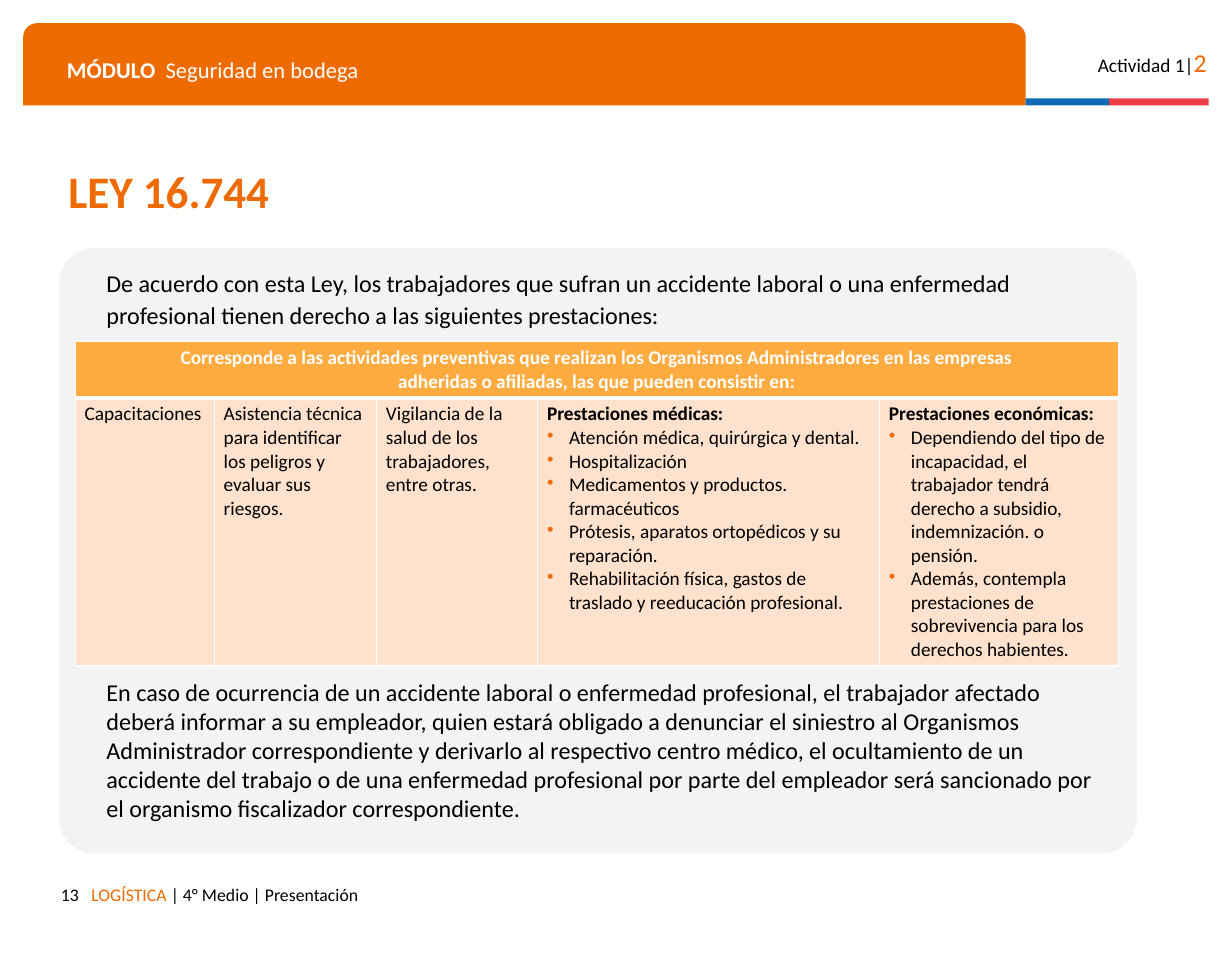
from lxml import etree
from pptx import Presentation
from pptx import util as u
from pptx.dml import color as dml_color
from pptx.enum import shapes, text
from pptx.oxml import ns

SCALE = 9144
FONT = "Calibri"
ORANGE, BLUE, RED = "ED6B00", "0F69B4", "EB3C46"
BLACK, WHITE, GRAY = "000000", "FFFFFF", "F3F3F3"
AMBER, PEACH = "FFAB40", "FFE2CD"
SHAPE = shapes.MSO_SHAPE
ALIGN = text.PP_ALIGN
ANCHOR = text.MSO_ANCHOR

HEADER = [
    "Corresponde a las actividades preventivas que realizan los Organismos Administradores en las empresas",
    "adheridas o afiliadas, las que pueden consistir en:",
]
COLUMNS = [
    (120, "Capacitaciones", []),
    (140, "Asistencia técnica para identificar los peligros y evaluar sus riesgos.", []),
    (139, "Vigilancia de la salud de los trabajadores, entre otras.", []),
    (295, "Prestaciones médicas:", [
        "Atención médica, quirúrgica y dental.",
        "Hospitalización",
        "Medicamentos y productos. farmacéuticos",
        "Prótesis, aparatos ortopédicos y su reparación.",
        "Rehabilitación física, gastos de traslado y reeducación profesional.",
    ]),
    (206, "Prestaciones económicas:", [
        "Dependiendo del tipo de incapacidad, el trabajador tendrá derecho a subsidio, indemnización. o pensión.",
        "Además, contempla prestaciones de sobrevivencia para los derechos habientes.",
    ]),
]
ROW_HEIGHTS = [48, 227]
INTRO = (
    "De acuerdo con esta Ley, los trabajadores que sufran un accidente laboral o una enfermedad "
    "profesional tienen derecho a las siguientes prestaciones:"
)
CLOSING = (
    "En caso de ocurrencia de un accidente laboral o enfermedad profesional, el trabajador afectado "
    "deberá informar a su empleador, quien estará obligado a denunciar el siniestro al Organismos "
    "Administrador correspondiente y derivarlo al respectivo centro médico, el ocultamiento de un "
    "accidente del trabajo o de una enfermedad profesional por parte del empleador será sancionado "
    "por el organismo fiscalizador correspondiente."
)


def px(value):
    return u.Emu(value * SCALE)


def rgb(value):
    return dml_color.RGBColor.from_string(value)


def add_text(paragraph, content, size=12, color=BLACK, bold=False, align=ALIGN.LEFT, spacing=None):
    paragraph.alignment = align
    if spacing:
        paragraph.line_spacing = spacing
    run = paragraph.add_run()
    run.text = content
    run.font.name = FONT
    run.font.size = u.Pt(size)
    run.font.bold = bold
    run.font.color.rgb = rgb(color)


def prepare_frame(frame, anchor=ANCHOR.TOP, inset=10):
    frame.word_wrap = True
    frame.auto_size = text.MSO_AUTO_SIZE.NONE
    frame.vertical_anchor = anchor
    frame.margin_left = frame.margin_right = px(10)
    frame.margin_top = frame.margin_bottom = px(inset)
    return frame.paragraphs[0]


def add_label(slide, box, content, anchor=ANCHOR.TOP, inset=10, **style):
    textbox = slide.shapes.add_textbox(*map(px, box))
    paragraph = prepare_frame(textbox.text_frame, anchor, inset)
    add_text(paragraph, content, **style)
    return paragraph


def add_block(slide, kind, box, color, *adjustments):
    shape = slide.shapes.add_shape(kind, *map(px, box))
    shape.shadow.inherit = False
    shape.fill.solid()
    shape.fill.fore_color.rgb = rgb(color)
    shape.line.fill.background()
    for index, value in enumerate(adjustments):
        shape.adjustments[index] = value


def set_title(slide, box, content, **style):
    title = slide.shapes.title
    title.left, title.top, title.width, title.height = map(px, box)
    add_text(prepare_frame(title.text_frame, ANCHOR.MIDDLE), content, **style)


def add_bullet(paragraph):
    properties = paragraph._p.get_or_add_pPr()
    properties.set("marL", str(px(19)))
    properties.set("indent", str(px(-19)))
    bullet_color = etree.SubElement(properties, ns.qn("a:buClr"))
    etree.SubElement(bullet_color, ns.qn("a:srgbClr"), val=ORANGE)
    etree.SubElement(properties, ns.qn("a:buChar"), char="•")


def format_cell(cell, fill, **widths):
    cell.margin_left = cell.margin_right = px(8)
    cell.margin_top = cell.margin_bottom = px(4)
    cell.vertical_anchor = ANCHOR.TOP
    cell.fill.solid()
    cell.fill.fore_color.rgb = rgb(fill)
    properties = cell._tc.get_or_add_tcPr()
    for index, side in enumerate("LRTB"):
        border = etree.Element(ns.qn(f"a:ln{side}"), w=str(u.Pt(widths.get(side, 1))))
        line_fill = etree.SubElement(border, ns.qn("a:solidFill"))
        etree.SubElement(line_fill, ns.qn("a:srgbClr"), val=WHITE)
        properties.insert(index, border)


def add_benefits_table(slide, left, top):
    width = sum(column[0] for column in COLUMNS)
    frame = slide.shapes.add_table(
        2, len(COLUMNS), px(left), px(top), px(width), px(sum(ROW_HEIGHTS))
    )
    table = frame.table
    for row, height in zip(table.rows, ROW_HEIGHTS):
        row.height = px(height)
    for index, (column_width, heading, items) in enumerate(COLUMNS):
        table.columns[index].width = px(column_width)
        format_cell(table.cell(0, index), AMBER, B=3)
        cell = table.cell(1, index)
        format_cell(cell, PEACH, T=3)
        add_text(cell.text_frame.paragraphs[0], heading, bold=bool(items))
        for item in items:
            paragraph = cell.text_frame.add_paragraph()
            add_text(paragraph, item)
            add_bullet(paragraph)
    header = table.cell(0, 0)
    header.merge(table.cell(0, len(COLUMNS) - 1))
    frame = header.text_frame
    for paragraph, line in zip([frame.paragraphs[0], frame.add_paragraph()], HEADER):
        add_text(paragraph, line, color=WHITE, bold=True, align=ALIGN.CENTER)


def add_banner(slide):
    add_block(slide, SHAPE.ROUND_2_SAME_RECTANGLE, (20, 20, 865, 71), ORANGE, 0.167, 0)
    add_block(slide, SHAPE.RECTANGLE, (885, 85, 72, 6), BLUE)
    add_block(slide, SHAPE.RECTANGLE, (957, 85, 86, 6), RED)
    add_label(slide, (48, 38, 100, 35), "MÓDULO", size=14, color=WHITE, bold=True)
    add_label(slide, (133, 38, 729, 35), "Seguridad en bodega", size=14, color=WHITE)
    activity = add_label(slide, (923, 30, 128, 38), "Actividad 1|", align=ALIGN.RIGHT)
    add_text(activity, "2", size=16, color=ORANGE, align=ALIGN.RIGHT)


def add_footer(slide):
    add_label(slide, (20, 753, 58, 29), "13", size=11, align=ALIGN.RIGHT)
    footer = add_label(slide, (69, 753, 714, 38), "LOGÍSTICA ", size=11, color=ORANGE)
    add_text(footer, "| 4° Medio | Presentación", size=11)


def main():
    presentation = Presentation()
    presentation.slide_width = px(1063)
    presentation.slide_height = px(827)
    slide = presentation.slides.add_slide(presentation.slide_layouts[5])
    add_banner(slide)
    add_footer(slide)
    add_block(slide, SHAPE.ROUNDED_RECTANGLE, (51, 214, 930, 523), GRAY, 0.059)
    set_title(slide, (49, 151, 979, 35), "LEY 16.744", size=28, color=ORANGE, bold=True, spacing=0.8)
    add_label(slide, (82, 179, 820, 155), INTRO, anchor=ANCHOR.MIDDLE, size=15, spacing=1.1)
    add_label(slide, (82, 580, 883, 140), CLOSING, inset=5, size=15)
    add_benefits_table(slide, 65, 295)
    presentation.save("out.pptx")


if __name__ == "__main__":
    main()
